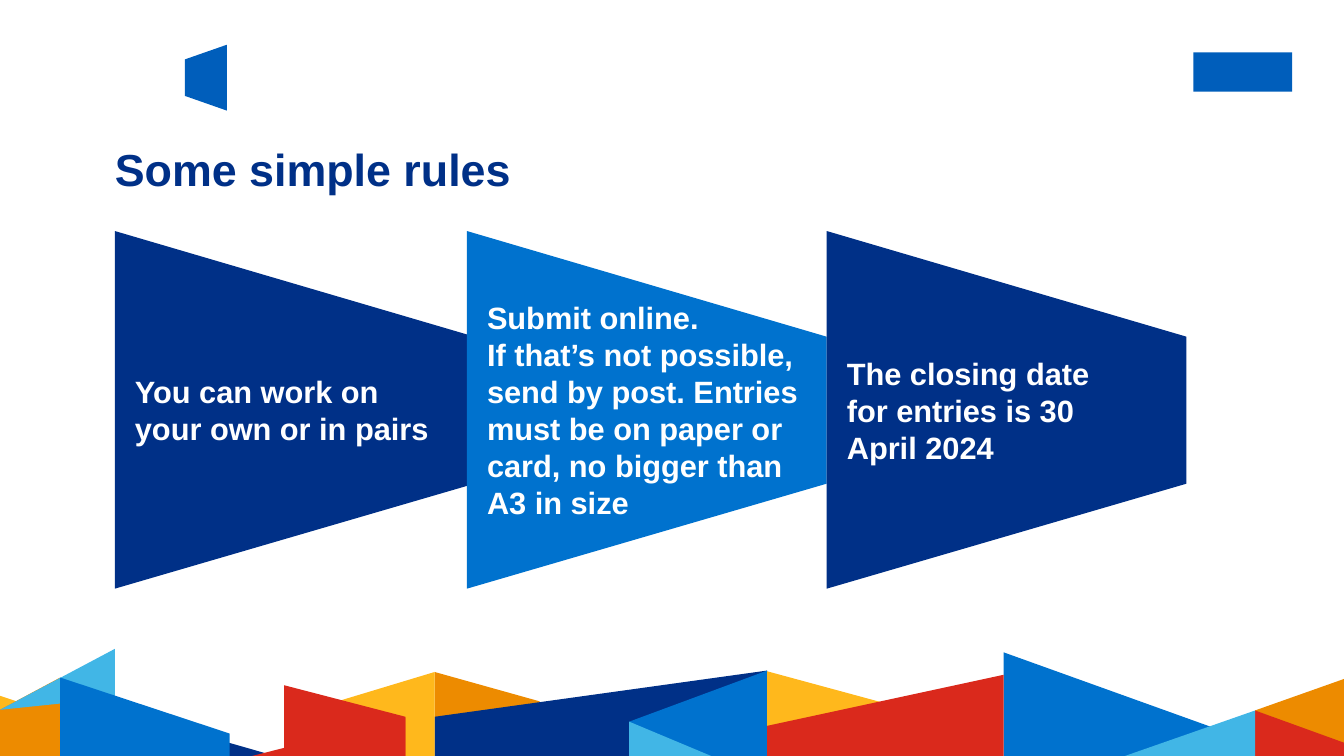
from pptx import Presentation
from pptx.dml.color import RGBColor
from pptx.enum.shapes import MSO_SHAPE
from pptx.enum.text import MSO_ANCHOR, MSO_AUTO_SIZE, PP_ALIGN
from pptx.util import Pt

NAVY = RGBColor(0x00, 0x30, 0x87)
BLUE = RGBColor(0x00, 0x72, 0xCE)
ROYAL = RGBColor(0x00, 0x5E, 0xBB)
SKY = RGBColor(0x41, 0xB6, 0xE6)
GOLD = RGBColor(0xFF, 0xB8, 0x1C)
AMBER = RGBColor(0xED, 0x8B, 0x00)
RED = RGBColor(0xDA, 0x29, 0x1C)
WHITE = RGBColor(0xFF, 0xFF, 0xFF)

WIDE, HIGH = 960, 540

# Walls stand on the slide's foot: colour, left, left top, right, right top
BACK = [
    (AMBER, 310.5, 480, 385.5, 501),
    (NAVY, 310.5, 512, 548, 479),
    (AMBER, 896.5, 507.5, WIDE, 485),
    (GOLD, 0, 497, 68.5, 520),
    (GOLD, 203, 512.5, 310.5, 480),
    (AMBER, 0, 507, 43, 484),
    (RED, 203, 489.5, 289.5, 512),
    (NAVY, 126.5, 520, 196.5, HIGH),
    (RED, 180, HIGH, 289.5, 512.5),
]
LEAF = [(0, 507), (82, 463.5), (82, 498.5)]
FRONT = [
    (BLUE, 43, 484, 164, 524),
    (BLUE, 449.5, 515.5, 548, 479),
    (SKY, 449.5, 515.5, 508, HIGH),
    (BLUE, 717, 466, 896.5, 530.5),
    (RED, 896.5, 507.5, WIDE, 530.5),
    (SKY, 803.5, HIGH, 896.5, 507.5),
    (GOLD, 548, 479.5, 642, 505),
    (RED, 548, 518.5, 717, 482),
]

# Each card: left, colour, paragraphs as lists of lines
CARDS = [
    (82, NAVY, [["You can work on", "your own or in pairs"]]),
    (333.5, BLUE, [["Submit online."],
                   ["If that’s not possible, send by post. Entries must be "
                    "on paper or card, no bigger than A3 in size"]]),
    (590.5, NAVY, [["The closing date", "for entries is 30", "April 2024"]]),
]


class Deck:
    font = "Arial"

    def __init__(self):
        self.file = Presentation()
        self.file.slide_width, self.file.slide_height = Pt(WIDE), Pt(HIGH)
        self.slide = self.file.slides.add_slide(self.file.slide_layouts[5])
        self.shapes = self.slide.shapes

    def paint(self, shape, color):
        shape.shadow.inherit = False
        shape.fill.solid()
        shape.fill.fore_color.rgb = color
        shape.line.fill.background()
        return shape

    def poly(self, color, points):
        first, *rest = [(Pt(x), Pt(y)) for x, y in points]
        pen = self.shapes.build_freeform(*first)
        pen.add_line_segments(rest, close=True)
        return self.paint(pen.convert_to_shape(), color)

    def wall(self, color, left, top, right, end):
        self.poly(color, [(left, HIGH), (left, top), (right, end), (right, HIGH)])

    def block(self, color, left, top, width, height):
        box = self.shapes.add_shape(MSO_SHAPE.RECTANGLE, Pt(left), Pt(top),
                                    Pt(width), Pt(height))
        self.paint(box, color)

    def frame(self, shape, pad):
        frame = shape.text_frame
        frame.word_wrap = True
        frame.auto_size = MSO_AUTO_SIZE.NONE
        frame.vertical_anchor = MSO_ANCHOR.MIDDLE
        frame.margin_left = frame.margin_right = Pt(pad)
        frame.margin_top = frame.margin_bottom = 0
        return frame

    def style(self, para, size, color, pitch):
        para.alignment = PP_ALIGN.LEFT
        para.line_spacing = pitch
        font = para.font
        font.name, font.size, font.bold = self.font, Pt(size), True
        font.color.rgb = color

    def title(self, text):
        head = self.shapes.title
        head.left, head.top = Pt(82), Pt(101)
        head.width, head.height = Pt(766), Pt(43)
        frame = self.frame(head, 0)
        frame.text = text
        self.style(frame.paragraphs[0], 32, NAVY, 0.9)

    def card(self, left, color, paras):
        right = left + 257
        shape = self.poly(color, [(left, 165), (right, 240.5),
                                  (right, 345.5), (left, 420.5)])
        frame = self.frame(shape, 14.4)
        for i, lines in enumerate(paras):
            para = frame.add_paragraph() if i else frame.paragraphs[0]
            for j, line in enumerate(lines):
                if j:
                    para.add_line_break()
                para.add_run().text = line
            self.style(para, 22, WHITE, Pt(26.4))


def main():
    deck = Deck()

    # Plain marks in the top corners
    deck.poly(ROYAL, [(132, 42.5), (162, 32), (162, 79), (132, 68.5)])
    deck.block(ROYAL, 852.5, 37.5, 70.5, 28)

    # Skyline along the foot
    for wall in BACK:
        deck.wall(*wall)
    deck.poly(SKY, LEAF)
    for wall in FRONT:
        deck.wall(*wall)

    # Title and rules
    deck.title("Some simple rules")
    for card in CARDS:
        deck.card(*card)

    deck.file.save("out.pptx")


if __name__ == "__main__":
    main()
